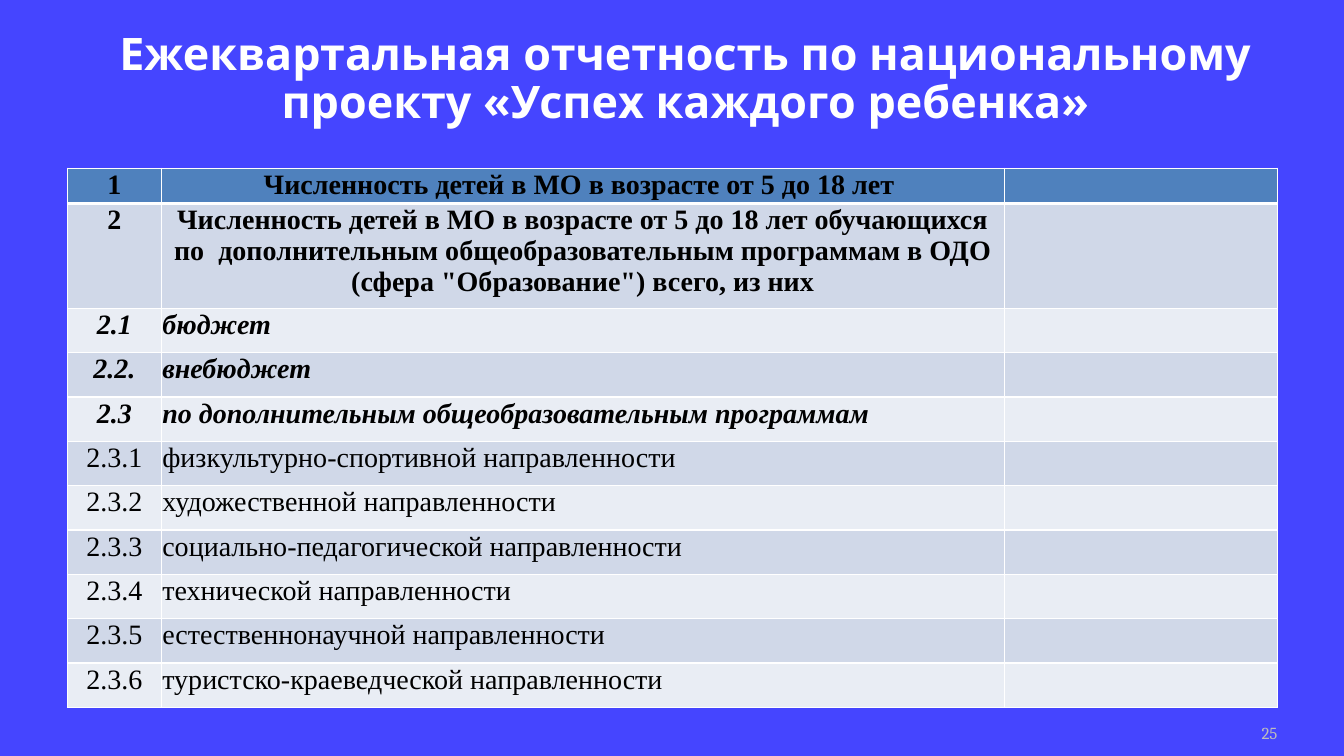
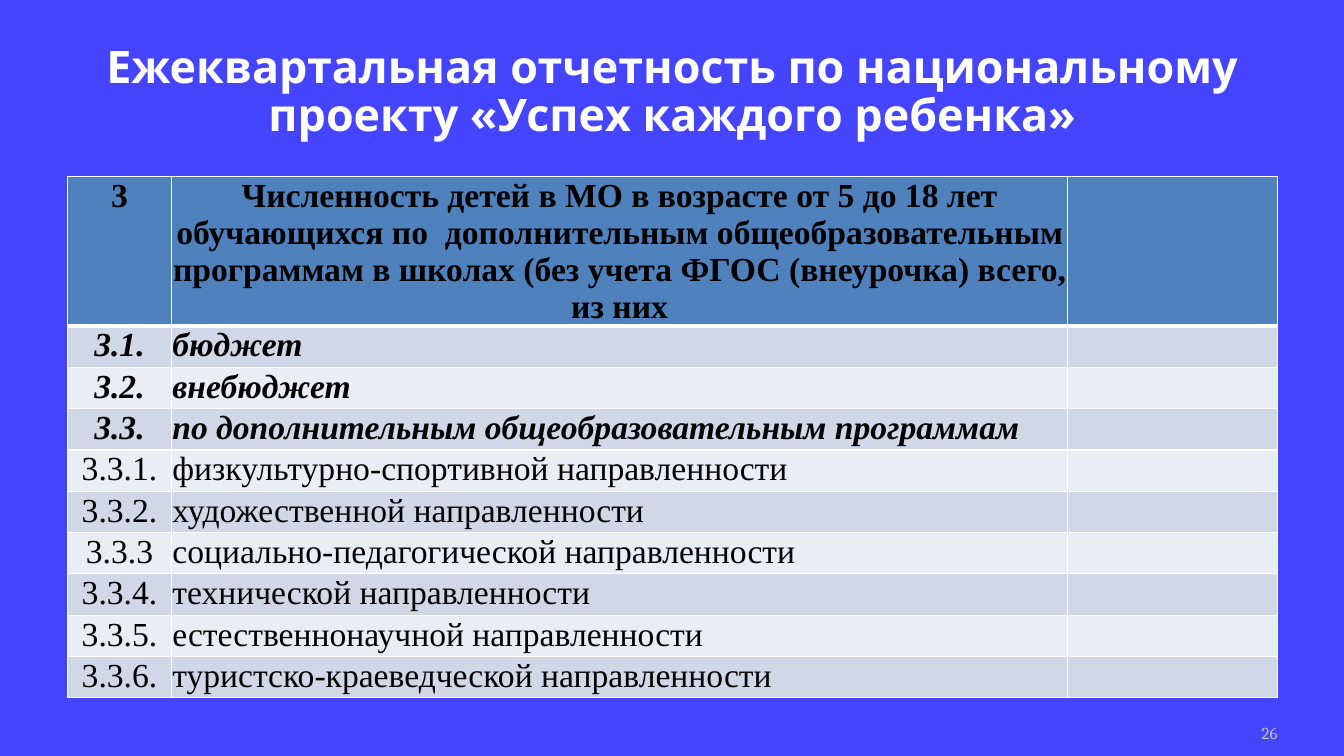
from lxml.etree import SubElement
from pptx import Presentation
from pptx.dml.color import RGBColor
from pptx.enum.text import MSO_ANCHOR, MSO_AUTO_SIZE, PP_ALIGN
from pptx.oxml.ns import qn
from pptx.util import Inches, Pt

BACK, WHITE, BLACK, GREY = "4545FF", "FFFFFF", "000000", "BDBDBD"
HEAD, BANDS = "4F81BD", ("D0D8E8", "E9EDF4")
TITLE = "Ежеквартальная отчетность по национальному проекту «Успех каждого ребенка»"

# Rows that both tables share, with the styles they use
SOURCES = ["бюджет", "внебюджет", "по дополнительным общеобразовательным программам"]
FIELDS = ["физкультурно-спортивной", "художественной", "социально-педагогической",
          "технической", "естественнонаучной", "туристско-краеведческой"]
LABELS = ([(text, "source") for text in SOURCES]
          + [(f"{field} направленности", "field") for field in FIELDS])


def paint(code):
    return RGBColor.from_string(code)


def number(labels, codes):
    return [(code, text, kind) for code, (text, kind) in zip(codes.split(), labels)]


class Deck:
    def __init__(self):
        self.prs = Presentation()
        self.prs.slide_width, self.prs.slide_height = Inches(13.33), Inches(7.5)
        self.slide = None

    def page(self):
        self.slide = self.prs.slides.add_slide(self.prs.slide_layouts[5])
        fill = self.slide.background.fill
        fill.solid()
        fill.fore_color.rgb = paint(BACK)

    def label(self, frame, text, font, size, color, align, bold=False, italic=False):
        para = frame.paragraphs[0]
        para.alignment = align
        run = para.add_run()
        run.text = text
        style = run.font
        style.name, style.size = font, Pt(size)
        style.bold, style.italic = bold, italic
        style.color.rgb = paint(color)
        return para

    def title(self, left, top, width):
        shape = self.slide.shapes.title
        shape.left, shape.top = Inches(left), Inches(top)
        shape.width, shape.height = Inches(width), Inches(1.25)
        frame = shape.text_frame
        frame.word_wrap = True
        frame.auto_size = MSO_AUTO_SIZE.NONE
        frame.vertical_anchor = MSO_ANCHOR.MIDDLE
        para = self.label(frame, TITLE, "Noto Sans", 32, WHITE, PP_ALIGN.CENTER, True)
        para.line_spacing = 0.9

    def border(self, cell, row):
        props = cell._tc.get_or_add_tcPr()
        widths = {"L": 1, "R": 1, "T": 3 if row == 1 else 1, "B": 3 if row == 0 else 1}
        for side, width in widths.items():
            line = SubElement(props, qn(f"a:ln{side}"), w=str(Pt(width)))
            fill = SubElement(line, qn("a:solidFill"))
            SubElement(fill, qn("a:srgbClr"), val=WHITE)

    def cell(self, cell, row):
        self.border(cell, row)
        cell.fill.solid()
        cell.fill.fore_color.rgb = paint(BANDS[(row - 1) % 2] if row else HEAD)
        cell.margin_left = cell.margin_right = cell.margin_top = Inches(0.01)
        cell.margin_bottom = 0
        cell.vertical_anchor = MSO_ANCHOR.TOP

    def table(self, top, cols, heights, size, rows):
        shape = self.slide.shapes.add_table(
            len(rows), len(cols), Inches(0.67), Inches(top),
            Inches(sum(cols)), Inches(sum(heights)))
        grid = shape.table
        for col, width in zip(grid.columns, cols):
            col.width = Inches(width)
        for line, height in zip(grid.rows, heights):
            line.height = Inches(height)
        for row, (code, text, kind) in enumerate(rows):
            for cell in grid.rows[row].cells:
                self.cell(cell, row)
            side = PP_ALIGN.CENTER if kind == "total" else PP_ALIGN.LEFT
            for col, (words, align) in enumerate([(code, PP_ALIGN.CENTER), (text, side)]):
                self.label(grid.cell(row, col).text_frame, words, "Times New Roman", size,
                           BLACK, align, kind != "field", kind == "source")

    def footer(self, num):
        box = self.slide.shapes.add_textbox(
            Inches(11.56), Inches(7.02), Inches(1.11), Inches(0.4))
        frame = box.text_frame
        frame.word_wrap = True
        frame.margin_left = frame.margin_right = 0
        frame.vertical_anchor = MSO_ANCHOR.BOTTOM
        self.label(frame, str(num), "Cambria", 12, GREY, PP_ALIGN.RIGHT)


def main():
    deck = Deck()

    # Children in extracurricular organisations
    deck.page()
    deck.title(1.06, 0.17, 11.48)
    totals = [
        ("1", "Численность детей в МО в возрасте от 5 до 18 лет ", "total"),
        ("2", "Численность детей в МО в возрасте от 5 до 18 лет обучающихся "
              "по  дополнительным общеобразовательным программам в ОДО "
              "(сфера \"Образование\") всего, из них", "total")]
    parts = number(LABELS, "2.1 2.2. 2.3 2.3.1 2.3.2 2.3.3 2.3.4 2.3.5 2.3.6")
    deck.table(1.67, [0.93, 8.36, 2.71], [0.35, 1.04] + [0.44] * len(parts), 20,
               totals + parts)
    deck.footer(25)

    # Children in schools
    deck.page()
    deck.title(0.67, 0.3, 12)
    totals = [
        ("3", "Численность детей в МО в возрасте от 5 до 18 лет обучающихся "
              "по  дополнительным общеобразовательным программам в школах "
              "(без учета ФГОС (внеурочка) всего, из них", "total")]
    parts = number(LABELS, "3.1. 3.2. 3.3. 3.3.1. 3.3.2. 3.3.3 3.3.4. 3.3.5. 3.3.6.")
    deck.table(1.75, [1.03, 8.89, 2.08], [1.48] + [0.41] * len(parts), 24,
               totals + parts)
    deck.footer(26)

    deck.prs.save("out.pptx")


if __name__ == "__main__":
    main()
